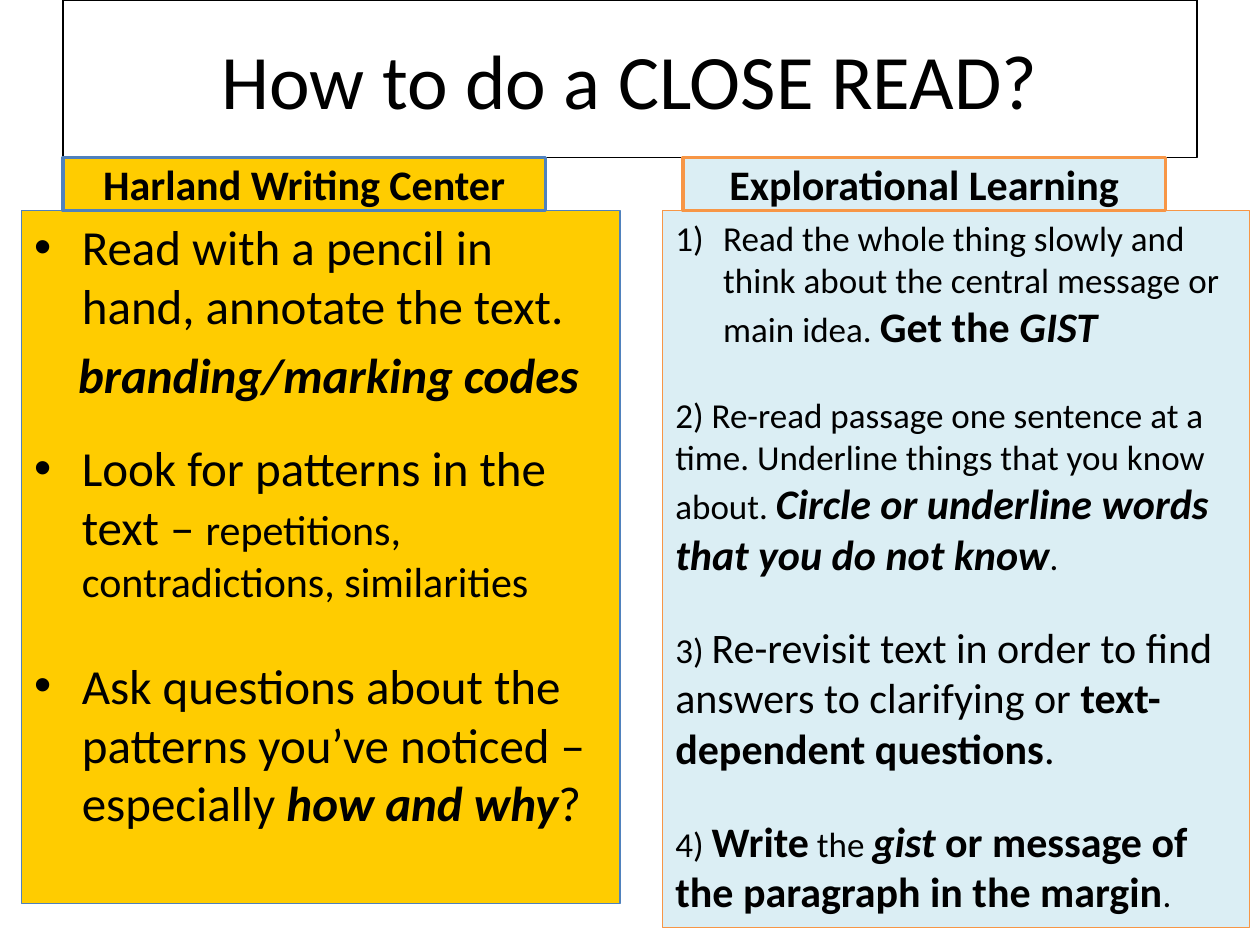
from lxml.etree import SubElement
from pptx import Presentation
from pptx.dml.color import RGBColor
from pptx.enum.text import MSO_ANCHOR as Anchor, MSO_AUTO_SIZE as AutoSize, PP_ALIGN as Align
from pptx.oxml.ns import qn
from pptx.util import Inches, Pt

WIDTH, HEIGHT = 10, 7.5
BLACK, GOLD, BLUE, ICE, ORANGE = "000000", "FFCC00", "4F81BD", "DBEEF4", "F79646"
HEADING_TOP, HEADING_HEIGHT, HEADING_WIDTH = 1.25, 0.42, 3.83
LIST_TOP = HEADING_TOP + HEADING_HEIGHT
HANG = 0.38
DOT = ("a:buChar", {"char": "•"})
NUMBER = ("a:buAutoNum", {"type": "arabicParenR"})
PLAIN = ("a:buNone", {})

PATTERN_STEPS = [
    (DOT, HANG, 0, [("Read with a pencil in hand, annotate the text.", 28, "")]),
    (PLAIN, 0.35, 5.6, [("branding/marking codes", 28, "bi")]),
    (DOT, HANG, 19.8, [("Look for patterns in the text – ", 28, ""),
                       ("repetitions, contradictions, similarities", 24, "")]),
    (DOT, HANG, 28.3, [("Ask questions about the patterns you’ve noticed – especially ", 28, ""),
                       ("how and why", 28, "bi"), ("?", 28, "")]),
]
READING_STEPS = [
    (NUMBER, HANG, 0, [
        ("Read the whole thing slowly and think about the central message or main idea. ", 20, ""),
        ("Get the ", 24, "b"), ("GIST", 24, "bi")]),
    (PLAIN, 0, 24.4, [
        ("2) Re-read passage one sentence at a time. Underline things that you know about. ", 20, ""),
        ("Circle or underline words that you do not know", 24, "bi"), (".", 20, "")]),
    (PLAIN, 0, 24.4, [
        ("3) ", 20, ""), ("Re-revisit text in order to find answers to clarifying or ", 24, ""),
        ("text-dependent questions", 24, "b"), (".", 24, "")]),
    (PLAIN, 0, 24.4, [
        ("4) ", 20, ""), ("Write", 24, "b"), (" the ", 20, ""), ("gist", 24, "bi"),
        (" or message of the paragraph in the margin", 24, "b"), (".", 20, "")]),
]


def colour(value):
    return RGBColor.from_string(value)


def write(paragraph, text, size, bold=False, italic=False, ink=BLACK):
    run = paragraph.add_run()
    run.text = text
    font = run.font
    font.name, font.size, font.bold, font.italic = "Calibri", Pt(size), bold, italic
    font.color.rgb = colour(ink)


def frame_panel(panel, box, border, weight, fill=None, anchor=Anchor.TOP):
    panel.left, panel.top, panel.width, panel.height = map(Inches, box)
    if fill:
        panel.fill.solid()
        panel.fill.fore_color.rgb = colour(fill)
    panel.line.color.rgb = colour(border)
    panel.line.width = Pt(weight)
    words = panel.text_frame
    words.word_wrap = True
    words.auto_size = AutoSize.NONE
    words.vertical_anchor = anchor
    return words


def place_label(panel, box, text, size, border, weight, fill=None, bold=False):
    words = frame_panel(panel, box, border, weight, fill, Anchor.MIDDLE)
    line = words.paragraphs[0]
    line.alignment = Align.CENTER
    write(line, text, size, bold=bold)


def place_steps(panel, box, steps, border, fill):
    words = frame_panel(panel, box, border, 0.75, fill)
    for position, (marker, margin, gap, pieces) in enumerate(steps):
        step = words.add_paragraph() if position else words.paragraphs[0]
        step.space_before = Pt(gap)
        tag, settings = marker
        properties = step._p.get_or_add_pPr()
        properties.set("marL", str(Inches(margin)))
        properties.set("indent", str(0 if marker is PLAIN else -Inches(margin)))
        SubElement(properties, qn(tag), settings)
        for text, size, style in pieces:
            write(step, text, size, bold="b" in style, italic="i" in style)


def place_column(slide, steps_panel, box, heading, heading_left, steps, border, fill):
    place_steps(steps_panel, box, steps, border, fill)
    heading_box = (heading_left, HEADING_TOP, HEADING_WIDTH, HEADING_HEIGHT)
    label = slide.shapes.add_textbox(*map(Inches, heading_box))
    place_label(label, heading_box, heading, 24, border, 2, fill, bold=True)


def main():
    deck = Presentation()
    deck.slide_width, deck.slide_height = Inches(WIDTH), Inches(HEIGHT)
    slide = deck.slides.add_slide(deck.slide_layouts[3])
    title, patterns, reading = slide.placeholders
    place_label(title, (WIDTH * 0.05, 0, WIDTH * 0.9, HEADING_TOP),
                "How to do a CLOSE READ?", 44, BLACK, 0.75)
    place_column(slide, patterns, (0.17, LIST_TOP, 4.75, 5.5),
                 "Harland Writing Center", 0.5, PATTERN_STEPS, BLUE, GOLD)
    place_column(slide, reading, (5.26, LIST_TOP, 4.66, 5.69),
                 "Explorational Learning", 5.42, READING_STEPS, ORANGE, ICE)
    deck.save("out.pptx")


if __name__ == "__main__":
    main()
